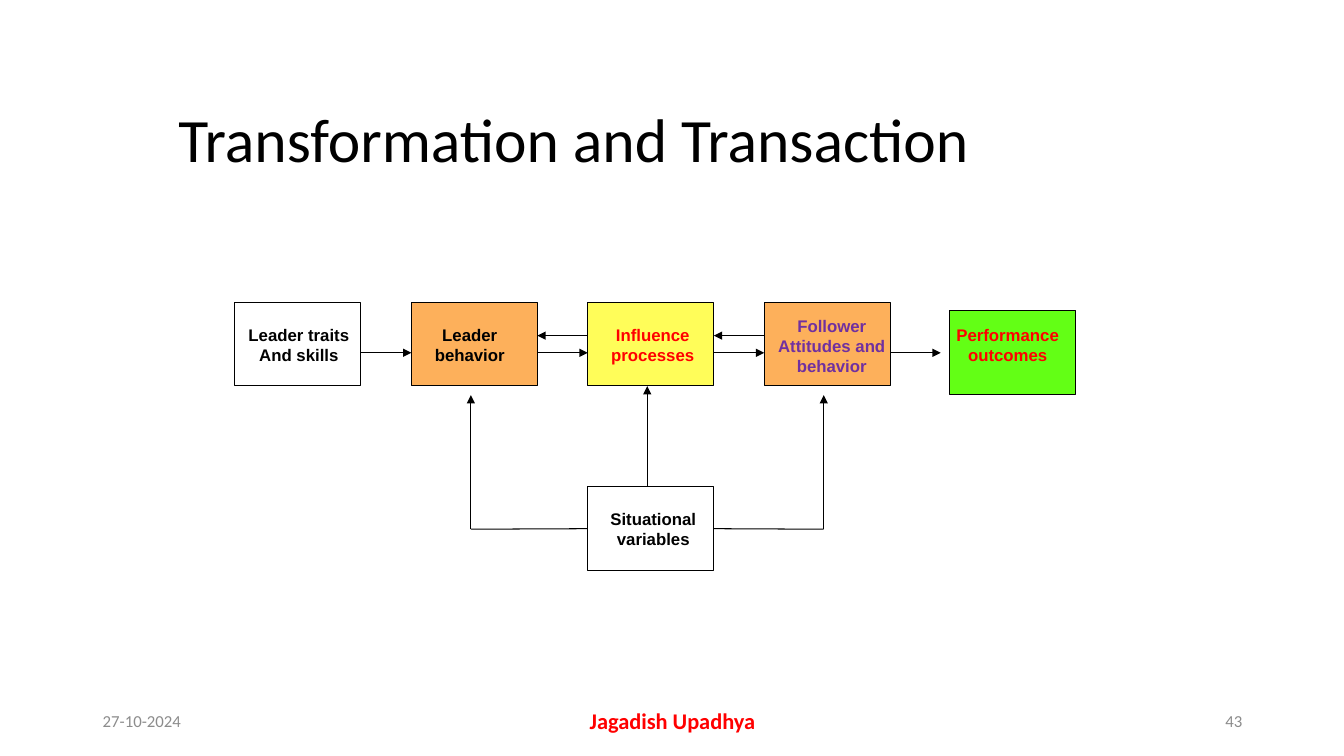
from pptx import Presentation
from pptx.dml.color import RGBColor as RGB
from pptx.enum.shapes import MSO_CONNECTOR as CONN, MSO_SHAPE as SHAPE
from pptx.enum.text import MSO_ANCHOR as ANCHOR, MSO_AUTO_SIZE as FIT, PP_ALIGN as ALIGN
from pptx.oxml.ns import qn
from pptx.util import Inches, Pt
from lxml import etree

BLACK = RGB(0x00, 0x00, 0x00)
RED = RGB(0xFF, 0x00, 0x00)
PURPLE = RGB(0x70, 0x30, 0xA0)
ORANGE = RGB(0xFD, 0xB0, 0x5B)
YELLOW = RGB(0xFF, 0xFD, 0x59)
GREEN = RGB(0x63, 0xFF, 0x15)
GREY = RGB(0x8C, 0x8C, 0x8C)

# Content
TITLE = "Transformation and Transaction"
# box: left, top, fill; label: lines, left, top, width, colour
BOXES = {
    "traits": (2.33, 3, None, ["Leader traits", "And skills"], 2.36, 3.17, 1.21, BLACK),
    "leader": (4.08, 3, ORANGE, ["Leader", "behavior"], 4.21, 3.17, 0.9, BLACK),
    "process": (5.83, 3, YELLOW, ["Influence", "processes"], 5.96, 3.17, 1.03, RED),
    "follower": (7.58, 3, ORANGE, ["Follower", "Attitudes and", "behavior"],
                 7.61, 3.08, 1.28, PURPLE),
    "outcome": (9.42, 3.08, GREEN, ["Performance", "outcomes"], 9.38, 3.17, 1.23, RED),
    "situation": (5.83, 4.83, None, ["Situational", "variables"], 5.95, 5, 1.06, BLACK),
}
# text, left, width, alignment, size, colour, bold
FOOTER = [
    ("27-10-2024", 0.92, 3, ALIGN.LEFT, 12, GREY, False),
    ("Jagadish Upadhya", 4.42, 4.5, ALIGN.CENTER, 16, RED, True),
    ("43", 9.42, 3, ALIGN.RIGHT, 12, GREY, False),
]

# Layout
WIDE, HIGH = 1.25, 0.83
STARTS, STEP, GAP = 3.58, 1.75, 0.5
AHEAD, BACK = 3.5, 3.33
LOW, TIP = 5.25, 3.92

deck = Presentation()
deck.slide_width, deck.slide_height = Inches(13.33), Inches(7.5)
slide = deck.slides.add_slide(deck.slide_layouts[5])
shapes = slide.shapes


def style(para, size, face, color, bold=False, align=ALIGN.CENTER):
    para.alignment = align
    font = para.font
    font.size, font.name, font.bold = Pt(size), face, bold
    font.color.rgb = color


def add_box(left, top, fill):
    box = shapes.add_shape(SHAPE.RECTANGLE, Inches(left), Inches(top),
                           Inches(WIDE), Inches(HIGH))
    box.shadow.inherit = False
    if fill is None:
        box.fill.background()
    else:
        box.fill.solid()
        box.fill.fore_color.rgb = fill
    box.line.color.rgb = BLACK
    box.line.width = Pt(0.75)
    return box


def add_label(lines, left, top, width, color):
    high = 0.11 + 0.2 * len(lines)
    frame = shapes.add_textbox(Inches(left), Inches(top),
                               Inches(width), Inches(high)).text_frame
    frame.word_wrap = False
    frame.auto_size = FIT.SHAPE_TO_FIT_TEXT
    frame.text = "\n".join(lines)
    for para in frame.paragraphs:
        style(para, 12, "Arial", color, True)


def add_line(x1, y1, x2, y2, arrow=True):
    line = shapes.add_connector(CONN.STRAIGHT, Inches(x1), Inches(y1),
                                Inches(x2), Inches(y2))
    line.line.color.rgb = BLACK
    line.line.width = Pt(0.75)
    if arrow:
        etree.SubElement(line.line._get_or_add_ln(), qn("a:tailEnd"), type="triangle")
    etree.SubElement(line._element.spPr, qn("a:effectLst"))
    return line


# Title
title = shapes.title
title.left, title.top = Inches(1.67), Inches(1)
title.width, title.height = Inches(9.33), Inches(0.83)
frame = title.text_frame
frame.text = TITLE
frame.auto_size = FIT.NONE
frame.vertical_anchor = ANCHOR.MIDDLE
style(frame.paragraphs[0], 44, "Calibri", BLACK, align=ALIGN.LEFT)
frame.paragraphs[0].line_spacing = 0.9

# Boxes
boxes = {name: add_box(*item[:3]) for name, item in BOXES.items()}

# Arrows along the row
for i in range(4):
    x = STARTS + i * STEP
    add_line(x, AHEAD, x + GAP, AHEAD)
    if i in (1, 2):
        add_line(x + GAP, BACK, x, BACK)

# Arrows up from the situation box
add_line(6.42, 4.83, 6.42, 3.83)
for x, edge, side in [(8.17, 7.08, 3), (4.67, 5.83, 1)]:
    add_line(edge, LOW, x, LOW, False).begin_connect(boxes["situation"], side)
    add_line(x, LOW, x, TIP)

# Labels
for item in BOXES.values():
    add_label(*item[3:])

# Footer
for text, left, width, align, size, color, bold in FOOTER:
    frame = shapes.add_textbox(Inches(left), Inches(6.95),
                               Inches(width), Inches(0.4)).text_frame
    frame.word_wrap = True
    frame.vertical_anchor = ANCHOR.MIDDLE
    frame.text = text
    style(frame.paragraphs[0], size, "Calibri", color, bold, align)

deck.save("out.pptx")
